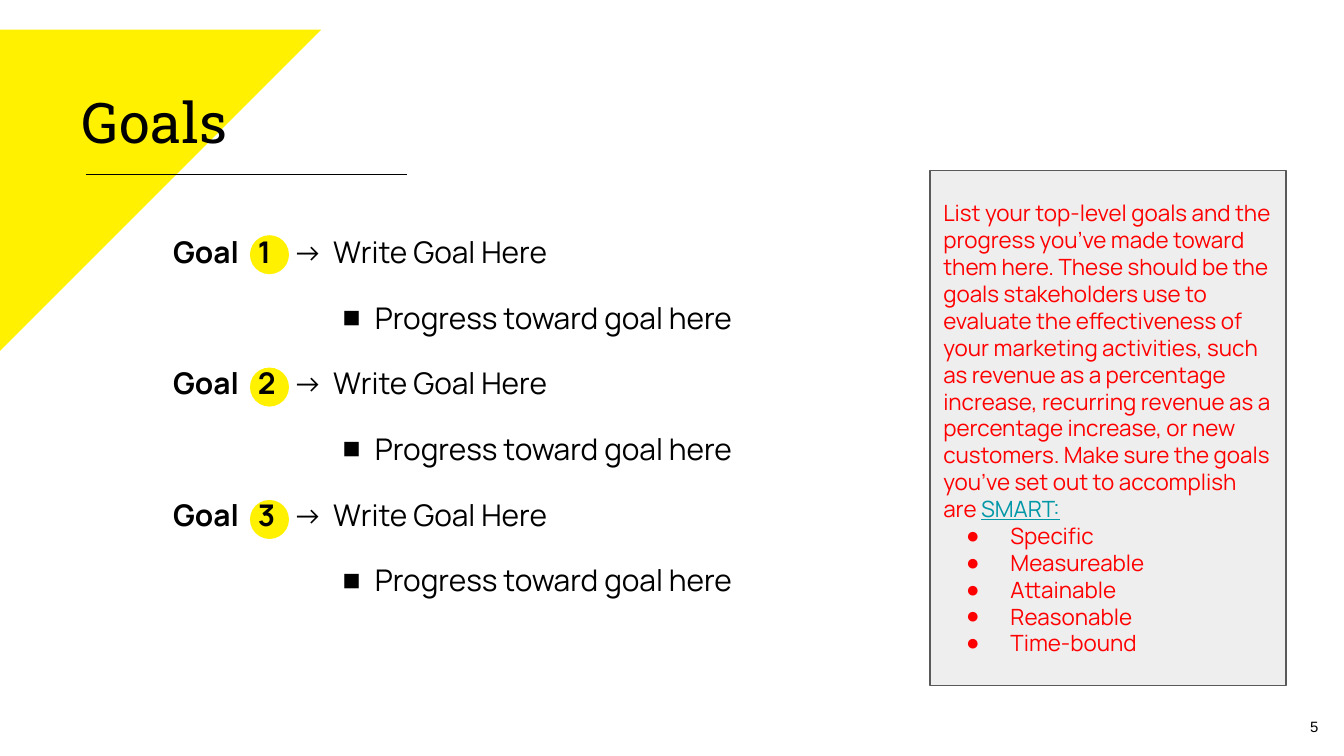
from lxml import etree
from pptx import Presentation
from pptx.dml.color import RGBColor
from pptx.enum.shapes import MSO_CONNECTOR, MSO_SHAPE
from pptx.enum.text import MSO_ANCHOR, MSO_AUTO_SIZE, PP_ALIGN
from pptx.oxml.ns import qn
from pptx.util import Inches, Pt

TRIANGLE, OVAL, RECTANGLE = MSO_SHAPE.RIGHT_TRIANGLE, MSO_SHAPE.OVAL, MSO_SHAPE.RECTANGLE
TOP, MIDDLE = MSO_ANCHOR.TOP, MSO_ANCHOR.MIDDLE
LEFT, RIGHT = PP_ALIGN.LEFT, PP_ALIGN.RIGHT
YELLOW, BLACK, RED, TEAL = "FFF100", "000000", "FF0000", "0097A7"
BODY_FONT = "Manrope"

TITLE = "Goals"
PAGE_NUMBER = "5"
GOALS = [
    ("1", "Write Goal Here", "Progress toward goal here"),
    ("2", "Write Goal Here", "Progress toward goal here"),
    ("3", "Write Goal Here", "Progress toward goal here"),
]
ADVICE = (
    "List your top-level goals and the progress you’ve made toward them here. "
    "These should be the goals stakeholders use to evaluate the effectiveness of "
    "your marketing activities, such as revenue as a percentage increase, recurring "
    "revenue as a percentage increase, or new customers. Make sure the goals you’ve "
    "set out to accomplish are "
)
SMART = ["Specific", "Measureable", "Attainable", "Reasonable", "Time-bound"]


def color(value):
    return RGBColor.from_string(value)


def add_shape(page, kind, left, top, width, height, fill, line=None):
    shape = page.shapes.add_shape(kind, Inches(left), Inches(top), Inches(width), Inches(height))
    shape.shadow.inherit = False
    shape.fill.solid()
    shape.fill.fore_color.rgb = color(fill)
    if line:
        shape.line.color.rgb = color(line)
        shape.line.width = Pt(0.75)
    else:
        shape.line.fill.background()
    return shape


def add_text_box(page, left, top, width, height):
    return page.shapes.add_textbox(Inches(left), Inches(top), Inches(width), Inches(height))


def prepare_frame(shape, anchor=TOP):
    """Set margins, wrapping and anchor, and return the text frame."""
    frame = shape.text_frame
    frame.margin_left = frame.margin_right = Inches(0.1)
    frame.margin_top = frame.margin_bottom = Inches(0.1)
    frame.word_wrap = True
    frame.auto_size = MSO_AUTO_SIZE.NONE
    frame.vertical_anchor = anchor
    return frame


def add_paragraph(frame, spans, size, font=BODY_FONT, ink=BLACK, align=LEFT, before=0,
                  bullet=None, indent=0, hanging=0, tabs=()):
    """Write spans of (text, overrides); the first one fills the frame's empty paragraph."""
    first = len(frame.paragraphs) == 1 and not frame.paragraphs[0].runs
    para = frame.paragraphs[0] if first else frame.add_paragraph()
    para.alignment = align
    para.space_before = Pt(0 if first else before)
    properties = para._p.get_or_add_pPr()
    if bullet:
        properties.set("marL", str(Inches(indent)))
        properties.set("indent", str(-Inches(hanging)))
        bullet_color = etree.SubElement(properties, qn("a:buClr"))
        etree.SubElement(bullet_color, qn("a:srgbClr"), val=ink)
        etree.SubElement(properties, qn("a:buFont"), typeface="Arial")
        etree.SubElement(properties, qn("a:buChar"), char=bullet)
    if tabs:
        tab_list = etree.SubElement(properties, qn("a:tabLst"))
        for stop in tabs:
            etree.SubElement(tab_list, qn("a:tab"), pos=str(Inches(stop)), algn="l")
    para.font.size = Pt(size)
    for text, overrides in spans:
        span = para.add_run()
        span.text = text
        span.font.name = font
        span.font.size = Pt(size)
        span.font.bold = overrides.get("bold", False)
        span.font.underline = overrides.get("underline", False)
        span.font.color.rgb = color(overrides.get("ink", ink))


def add_title(page):
    title = page.shapes.title
    title.left, title.top = Inches(0.51), Inches(0.55)
    title.width, title.height = Inches(9.32), Inches(0.63)
    add_paragraph(prepare_frame(title), [(TITLE, {})], 30, font="Roboto Slab")
    title.element.getparent().append(title.element)  # in front of the triangle

    rule = page.shapes.add_connector(
        MSO_CONNECTOR.STRAIGHT, Inches(0.64), Inches(1.3), Inches(3.03), Inches(1.3))
    rule.line.color.rgb = color(BLACK)
    rule.line.width = Pt(0.75)
    etree.SubElement(rule._element.spPr, qn("a:effectLst"))


def add_goals(page):
    for index in range(len(GOALS)):
        add_shape(page, OVAL, 1.86, 1.75 + index * 0.985, 0.29, 0.29, YELLOW)
    frame = prepare_frame(add_text_box(page, 1.19, 1.64, 4.91, 3.34))
    for number, goal, progress in GOALS:
        spans = [(f"Goal\t{number}", {"bold": True}), (f"\t→\t{goal}", {})]
        add_paragraph(frame, spans, 16, before=16, tabs=(0.63, 0.89, 1.19))
        add_paragraph(frame, [(progress, {})], 16, before=16,
                      bullet="■", indent=1.5, hanging=0.24)


def add_advice(page):
    panel = add_shape(page, RECTANGLE, 6.92, 1.27, 2.65, 3.83, "EEEEEE", line="595959")
    frame = prepare_frame(panel, MIDDLE)
    spans = [(ADVICE, {}), ("SMART:", {"ink": TEAL, "underline": True})]
    add_paragraph(frame, spans, 12, ink=RED)
    for item in SMART:
        add_paragraph(frame, [(item, {})], 12, ink=RED, bullet="●", indent=0.5, hanging=0.33)


def main():
    deck = Presentation()
    deck.slide_width = Inches(10)
    deck.slide_height = deck.slide_width * 9 // 16
    page = deck.slides.add_slide(deck.slide_layouts[5])

    add_shape(page, TRIANGLE, 0, 0.22, 2.39, 2.39, YELLOW).rotation = 90
    add_title(page)
    add_advice(page)
    add_goals(page)
    number_frame = prepare_frame(add_text_box(page, 9.31, 5.19, 0.6, 0.43), MIDDLE)
    add_paragraph(number_frame, [(PAGE_NUMBER, {})], 8, font="Arial", align=RIGHT)

    deck.save("out.pptx")


if __name__ == "__main__":
    main()
